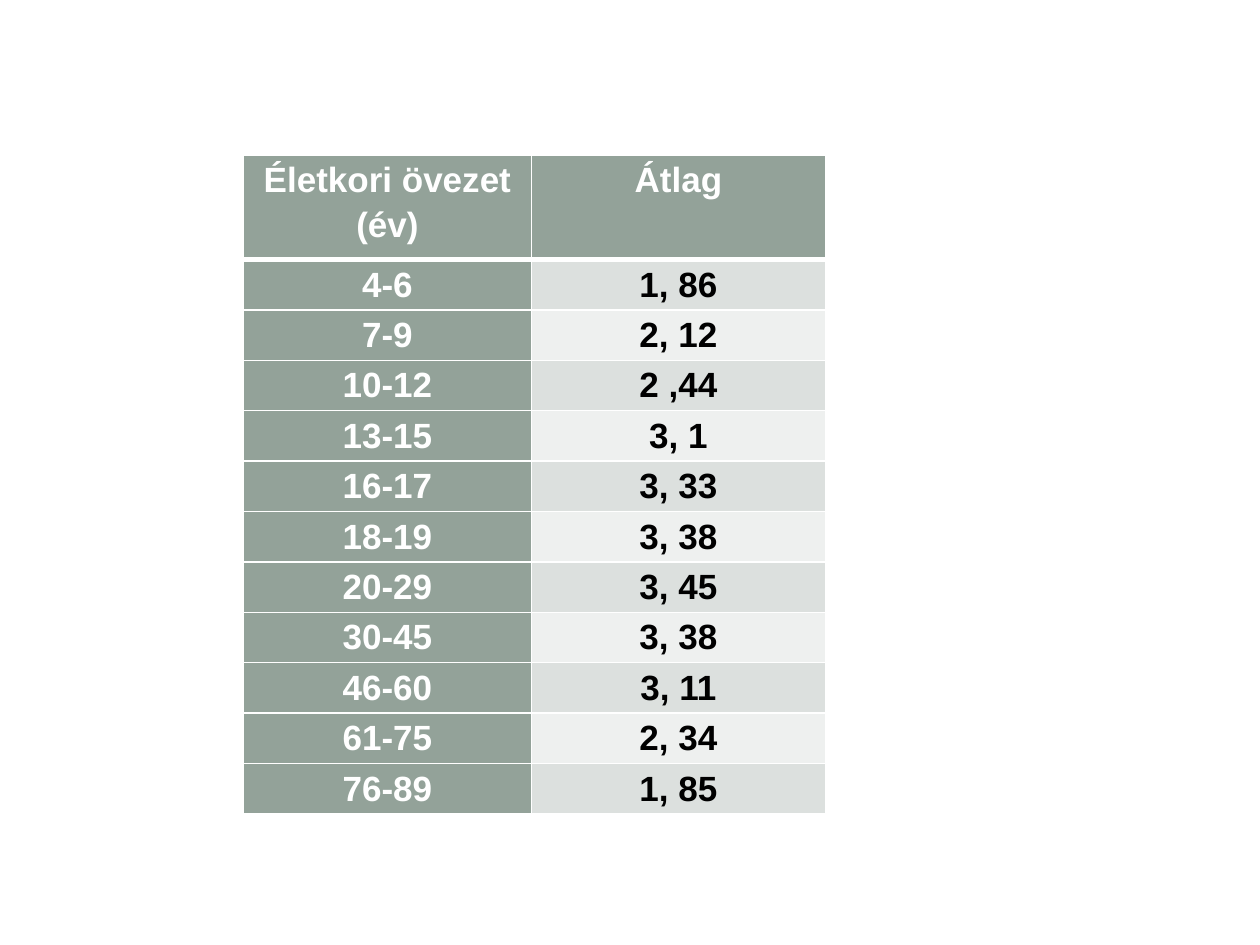
from lxml.etree import SubElement
from pptx import Presentation
from pptx.dml.color import RGBColor
from pptx.enum.text import PP_ALIGN
from pptx.oxml.ns import qn
from pptx.util import Inches, Pt

HEADERS = ("Életkori övezet (év)", "Átlag")
AVERAGES = (
    ("4-6", "1, 86"),
    ("7-9", "2, 12"),
    ("10-12", "2 ,44"),
    ("13-15", "3, 1"),
    ("16-17", "3, 33"),
    ("18-19", "3, 38"),
    ("20-29", "3, 45"),
    ("30-45", "3, 38"),
    ("46-60", "3, 11"),
    ("61-75", "2, 34"),
    ("76-89", "1, 85"),
)


def color(value):
    return RGBColor.from_string(value)


class SlideBuilder:
    font_name = "Arial"
    font_size = Pt(20)
    accent = "93A299"
    bands = ("DCE0DE", "EEF0EF")
    white = "FFFFFF"
    black = "000000"

    def __init__(self, slide):
        self.slide = slide

    def border(self, cell, side, width):
        properties = cell._tc.get_or_add_tcPr()
        line = SubElement(properties, qn(f"a:ln{side}"), w=str(Pt(width)))
        fill = SubElement(line, qn("a:solidFill"))
        SubElement(fill, qn("a:srgbClr"), val=self.white)

    def cell(self, cell, text, fill, text_color, top=1, bottom=1):
        for side, width in (("L", 1), ("R", 1), ("T", top), ("B", bottom)):
            self.border(cell, side, width)
        cell.fill.solid()
        cell.fill.fore_color.rgb = color(fill)
        cell.margin_left = cell.margin_right = Inches(0.07)
        cell.margin_top = cell.margin_bottom = 0
        cell.text = text
        paragraph = cell.text_frame.paragraphs[0]
        paragraph.alignment = PP_ALIGN.CENTER
        paragraph.line_spacing = 1.15
        paragraph.font.name = self.font_name
        paragraph.font.size = self.font_size
        paragraph.font.bold = True
        paragraph.font.color.rgb = color(text_color)

    def table(self, left, top, column_widths, header_height, row_height, headers, rows):
        height = header_height + row_height * len(rows)
        table = self.slide.shapes.add_table(
            len(rows) + 1, len(headers), Inches(left), Inches(top),
            Inches(sum(column_widths)), Inches(height),
        ).table
        for column, width in zip(table.columns, column_widths):
            column.width = Inches(width)
        for row in table.rows:
            row.height = Inches(row_height)
        table.rows[0].height = Inches(header_height)
        for index, text in enumerate(headers):
            self.cell(table.cell(0, index), text, self.accent, self.white, bottom=3)
        for index, (age, average) in enumerate(rows):
            top_width = 3 if index == 0 else 1
            self.cell(table.cell(index + 1, 0), age, self.accent, self.white, top_width)
            self.cell(table.cell(index + 1, 1), average, self.bands[index % 2],
                      self.black, top_width)


def main():
    presentation = Presentation()
    presentation.slide_width = Inches(10)
    presentation.slide_height = Inches(7.5)
    slide = presentation.slides.add_slide(presentation.slide_layouts[6])
    builder = SlideBuilder(slide)
    builder.table(1.93, 1.23, (2.29, 2.33), 0.83, 0.4, HEADERS, AVERAGES)
    presentation.save("out.pptx")


if __name__ == "__main__":
    main()
